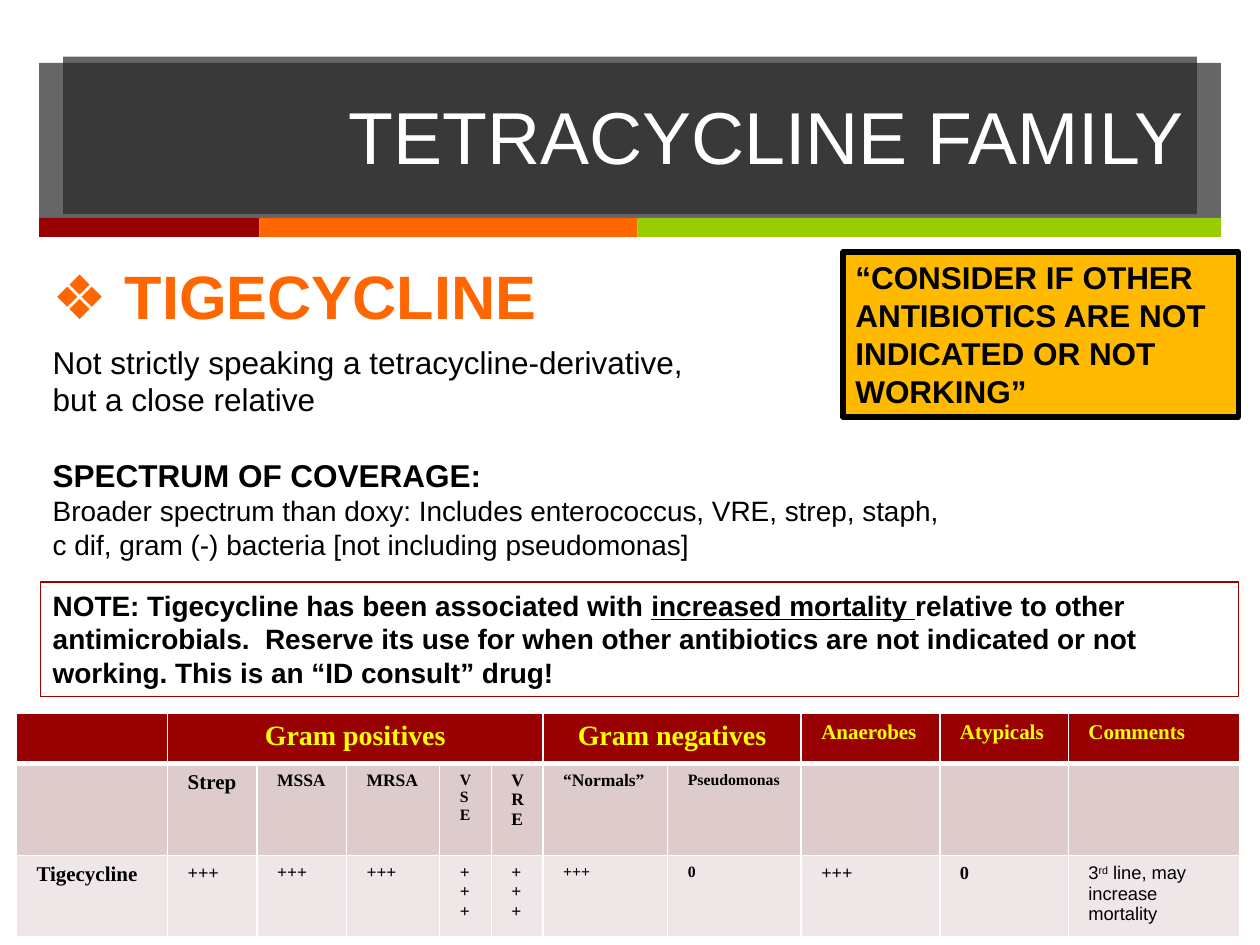
from pptx import Presentation
from pptx.dml.color import RGBColor
from pptx.enum.shapes import MSO_SHAPE
from pptx.enum.text import MSO_ANCHOR, MSO_AUTO_SIZE, PP_ALIGN
from pptx.oxml import parse_xml
from pptx.oxml.ns import nsdecls
from pptx.util import Inches, Pt

COLORS = {
    "charcoal": "262626", "red": "990000", "orange": "FF6600", "green": "99CC00",
    "amber": "FFBA00", "yellow": "FFFF00", "white": "FFFFFF", "black": "000000",
    "rose": "DECCCC", "blush": "EFE7E7",
}


def write(paragraph, text, size=18, color="black", bold=False, font="Arial",
          underline=False, raised=False, align=PP_ALIGN.LEFT):
    paragraph.alignment = align
    run = paragraph.add_run()
    run.text = text
    run.font.size = Pt(size)
    run.font.name = font
    run.font.bold = bold
    run.font.underline = underline
    run.font.color.rgb = RGBColor.from_string(COLORS[color])
    if raised:
        run.font._element.set("baseline", "30000")


def paint(shape, fill=None, line=None, width=1, opacity=100):
    shape.shadow.inherit = False
    if fill:
        shape.fill.solid()
        shape.fill.fore_color.rgb = RGBColor.from_string(COLORS[fill])
        if opacity < 100:
            tint = shape.fill._xPr.solidFill.srgbClr
            tint.append(parse_xml(f'<a:alpha {nsdecls("a")} val="{opacity * 1000}"/>'))
    else:
        shape.fill.background()
    if line:
        shape.line.color.rgb = RGBColor.from_string(COLORS[line])
        shape.line.width = Pt(width)
    else:
        shape.line.fill.background()


prs = Presentation()
prs.slide_width, prs.slide_height = Inches(10), Inches(7.5)
slide = prs.slides.add_slide(prs.slide_layouts[5])
shapes = slide.shapes

for left, top, width, height, color, opacity in [
    (0.31, 0.5, 9.38, 1.24, "charcoal", 70),
    (0.31, 1.73, 1.75, 0.15, "red", 100),
    (2.06, 1.73, 3, 0.15, "orange", 100),
    (5.06, 1.73, 4.63, 0.15, "green", 100),
]:
    band = shapes.add_shape(MSO_SHAPE.RECTANGLE, Inches(left), Inches(top),
                            Inches(width), Inches(height))
    paint(band, color, opacity=opacity)

title = shapes.title
title.element.getparent().append(title.element)
title.left, title.top = Inches(0.5), Inches(0.45)
title.width, title.height = Inches(9), Inches(1.25)
paint(title, "charcoal", opacity=70)
title.text_frame.auto_size = MSO_AUTO_SIZE.NONE
title.text_frame.vertical_anchor = MSO_ANCHOR.MIDDLE
write(title.text_frame.paragraphs[0], "TETRACYCLINE FAMILY", size=42, color="white",
      align=PP_ALIGN.RIGHT)

drug = shapes.add_textbox(Inches(0.32), Inches(2), Inches(4.08), Inches(0.69)).text_frame
drug.word_wrap = False
write(drug.paragraphs[0], "❖ TIGECYCLINE", size=35, color="orange", bold=True)

coverage = shapes.add_textbox(Inches(0.32), Inches(2.67), Inches(7.31), Inches(1.85)).text_frame
coverage.word_wrap = True
for i, (text, size, bold, gap) in enumerate([
    ("Not strictly speaking a tetracycline-derivative,", 18, False, 0),
    ("but a close relative", 18, False, 0),
    ("SPECTRUM OF COVERAGE:", 18, True, 21.5),
    ("Broader spectrum than doxy: Includes enterococcus, VRE, strep, staph, "
     "c dif, gram (-) bacteria [not including pseudomonas]", 16, False, 0),
]):
    paragraph = coverage.add_paragraph() if i else coverage.paragraphs[0]
    paragraph.space_before = Pt(gap)
    write(paragraph, text, size=size, bold=bold)

advice = ("“CONSIDER IF OTHER ANTIBIOTICS ARE NOT INDICATED OR NOT WORKING”", False)
warning = [
    ("NOTE: Tigecycline has been associated with ", False),
    ("increased mortality ", True),
    ("relative to other antimicrobials.  Reserve its use for when other antibiotics "
     "are not indicated or not working. This is an “ID consult” drug!", False),
]
for left, top, width, height, fill, line, weight, size, parts in [
    (6.69, 2, 3.14, 1.31, "amber", "black", 3, 18, [advice]),
    (0.32, 4.62, 9.51, 0.91, None, "red", 0.75, 16, warning),
]:
    callout = shapes.add_shape(MSO_SHAPE.RECTANGLE, Inches(left), Inches(top),
                               Inches(width), Inches(height))
    paint(callout, fill, line, weight)
    callout.text_frame.word_wrap = True
    callout.text_frame.vertical_anchor = MSO_ANCHOR.TOP
    for text, underline in parts:
        write(callout.text_frame.paragraphs[0], text, size=size, bold=True, underline=underline)

column_widths = [1.2, 0.71, 0.71, 0.74, 0.41, 0.41, 0.99, 1.06, 1.1, 1.02, 1.36]
row_heights = [0.39, 0.73, 0.64]
row_fills = ["red", "rose", "blush"]
row_texts = [
    ["", "Gram positives", "", "", "", "", "Gram negatives", "",
     "Anaerobes", "Atypicals", "Comments"],
    ["", "Strep", "MSSA", "MRSA", "VSE", "VRE", "“Normals”", "Pseudomonas", "", "", ""],
    ["Tigecycline"] + ["+++"] * 6 + ["0", "+++", "0", ""],
]
row_sizes = [
    [16] * 8 + [12] * 3,
    [12, 12, 10, 10, 9, 10, 10, 9, 12, 12, 12],
    [12, 10.5, 10, 10, 10, 10, 9, 9, 10.5, 10.5, 10.5],
]
spectrum = shapes.add_table(3, 11, Inches(0.13), Inches(5.66), Inches(9.71), Inches(1.76)).table
for column, width in zip(spectrum.columns, column_widths):
    column.width = Inches(width)
for row, height in zip(spectrum.rows, row_heights):
    row.height = Inches(height)
spectrum.cell(0, 1).merge(spectrum.cell(0, 5))
spectrum.cell(0, 6).merge(spectrum.cell(0, 7))

for r, (texts, sizes) in enumerate(zip(row_texts, row_sizes)):
    for c, (text, size) in enumerate(zip(texts, sizes)):
        cell = spectrum.cell(r, c)
        for side in "LRTB":
            points = 3 if (r, side) in [(0, "B"), (1, "T")] else 1
            cell._tc.get_or_add_tcPr().append(parse_xml(
                f'<a:ln{side} {nsdecls("a")} w="{Pt(points)}"><a:solidFill>'
                f'<a:srgbClr val="{COLORS["white"]}"/></a:solidFill></a:ln{side}>'))
        cell.fill.solid()
        cell.fill.fore_color.rgb = RGBColor.from_string(COLORS[row_fills[r]])
        if text:
            write(cell.text_frame.paragraphs[0], text, size=size, bold=True,
                  font="Times New Roman", color="black" if r else "yellow",
                  align=PP_ALIGN.CENTER if text.startswith("Gram") else PP_ALIGN.LEFT)
        if text or (r, c) == (2, 10):
            cell.margin_left = cell.margin_right = Inches(0.16)
            cell.margin_top = cell.margin_bottom = Inches(0.06)

comment = spectrum.cell(2, 10).text_frame.paragraphs[0]
for text, raised in [("3", False), ("rd", True), (" line, may increase mortality", False)]:
    write(comment, text, size=10.5, raised=raised)

prs.save("out.pptx")
